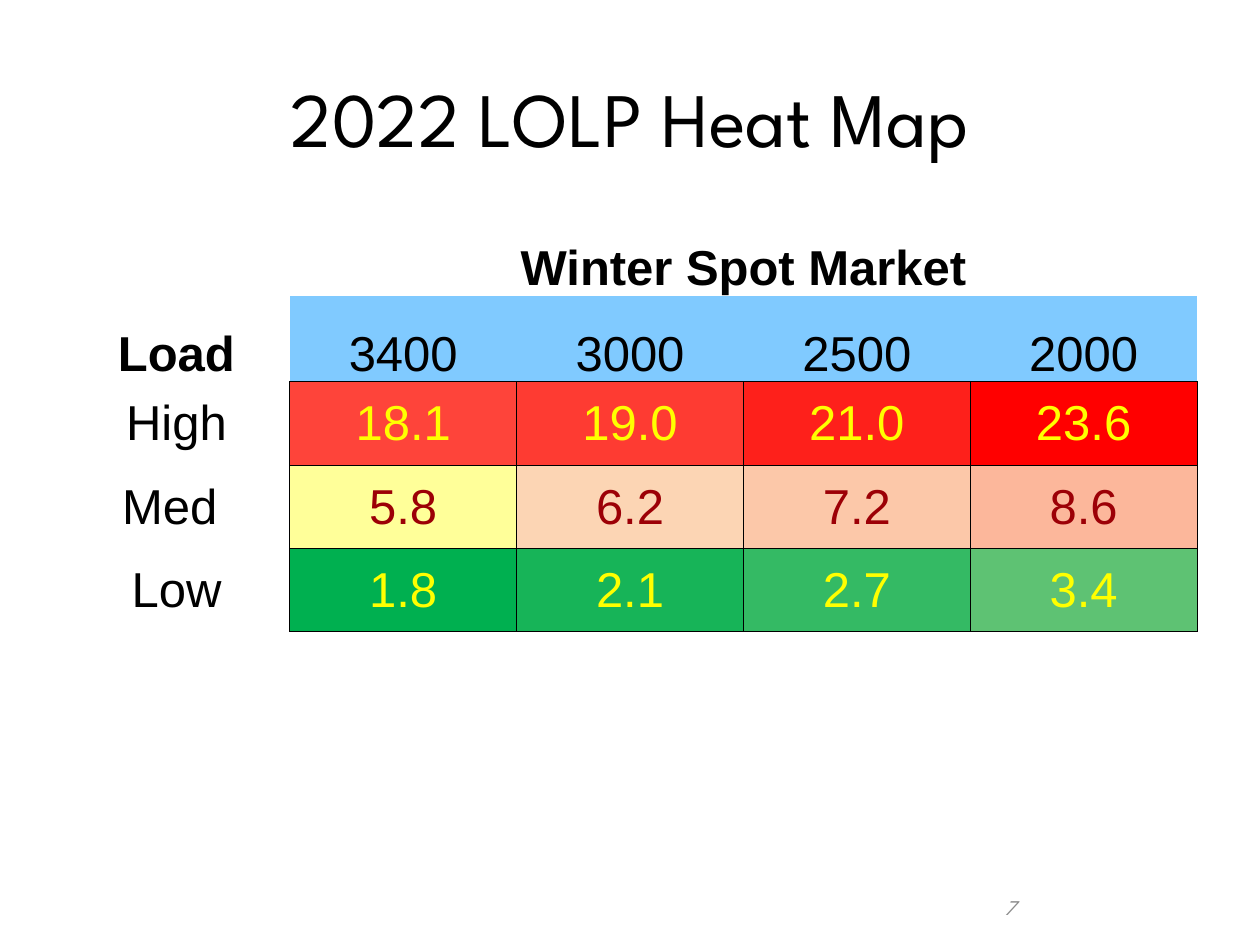
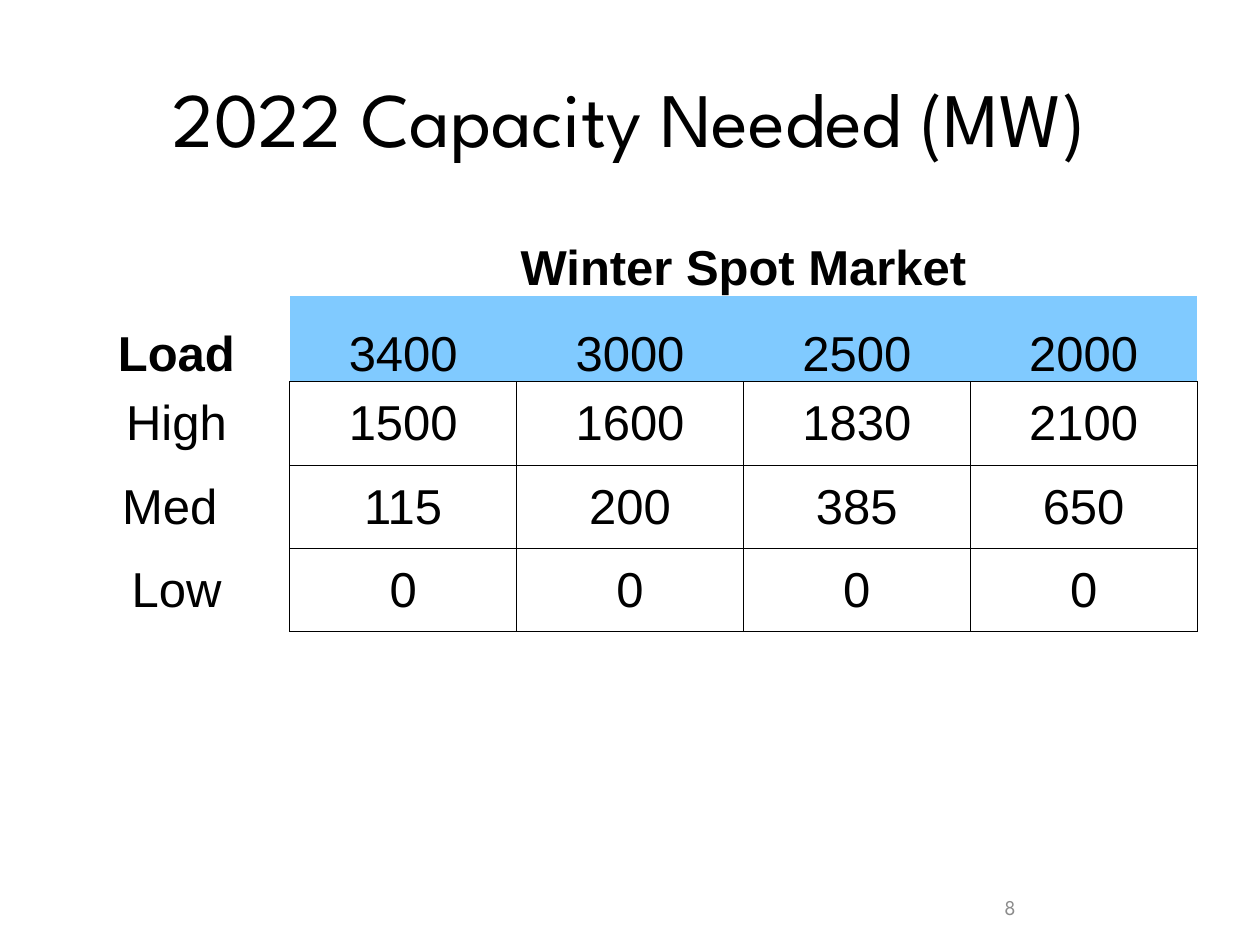
from lxml import etree
from pptx import Presentation
from pptx.dml.color import RGBColor
from pptx.enum.text import MSO_ANCHOR, PP_ALIGN
from pptx.oxml.ns import qn
from pptx.util import Inches, Pt

CENTER, RIGHT = PP_ALIGN.CENTER, PP_ALIGN.RIGHT
MIDDLE, BOTTOM = MSO_ANCHOR.MIDDLE, MSO_ANCHOR.BOTTOM

BLACK = RGBColor(0x00, 0x00, 0x00)
WHITE = RGBColor(0xFF, 0xFF, 0xFF)
GREY = RGBColor(0x8C, 0x8C, 0x8C)
SKY = RGBColor(0x80, 0xCA, 0xFF)
YELLOW = RGBColor(0xFF, 0xFF, 0x00)
DARK_RED = RGBColor(0x9C, 0x00, 0x06)

HEAT_FILLS = [
    [RGBColor(0xFE, 0x44, 0x3A), RGBColor(0xFE, 0x3B, 0x32),
     RGBColor(0xFE, 0x20, 0x1B), RGBColor(0xFF, 0x00, 0x00)],
    [RGBColor(0xFF, 0xFF, 0x99), RGBColor(0xFC, 0xD5, 0xB4),
     RGBColor(0xFC, 0xC8, 0xA9), RGBColor(0xFC, 0xB7, 0x9B)],
    [RGBColor(0x00, 0xB0, 0x50), RGBColor(0x17, 0xB4, 0x58),
     RGBColor(0x34, 0xBA, 0x64), RGBColor(0x5E, 0xC2, 0x73)],
]
HEAT_INKS = [YELLOW, DARK_RED, YELLOW]
PLAIN_FILLS = [[WHITE] * 4] * 3
PLAIN_INKS = [BLACK] * 3

TITLE_FONT, TABLE_FONT = "League Spartan", "Arial"
SLIDE_W, SLIDE_H = Inches(10), Inches(7.5)
MARGIN = Inches(0.5)
TABLE_TOP = Inches(1.67)
COL_W = (SLIDE_W - 2 * MARGIN) // 5
ROW_HEIGHTS = [Inches(h) for h in (0.68, 0.68, 0.66, 0.66, 0.66)]

SPOT_MARKET = ["3400", "3000", "2500", "2000"]
LOADS = ["High", "Med ", "Low"]
LOLP = [["18.1", "19.0", "21.0", "23.6"],
        ["5.8", "6.2", "7.2", "8.6"],
        ["1.8", "2.1", "2.7", "3.4"]]
CAPACITY = [["1500", "1600", "1830", "2100"],
            ["115", "200", "385", "650"],
            ["0", "0", "0", "0"]]


def write(tf, text, font, size, color, align=CENTER, bold=False, italic=False):
    p = tf.paragraphs[0]
    p.text = text
    p.alignment = align
    p.font.name, p.font.size = font, Pt(size)
    p.font.bold, p.font.italic = bold, italic
    p.font.color.rgb = color


def add_text(s, left, top, width, height, text, size, color, **style):
    tf = s.shapes.add_textbox(left, top, width, height).text_frame
    tf.word_wrap = True
    tf.vertical_anchor = MIDDLE
    write(tf, text, TITLE_FONT, size, color, **style)


def set_borders(cell, sides):
    """Rule the sides named by letters of "LRTB" and clear the others."""
    tc_pr = cell._tc.get_or_add_tcPr()
    for side in "LRTB":
        ln = etree.SubElement(tc_pr, qn("a:ln" + side), w=str(Pt(0.5)))
        if side in sides:
            fill = etree.SubElement(ln, qn("a:solidFill"))
            etree.SubElement(fill, qn("a:srgbClr"), val=str(BLACK))
        else:
            etree.SubElement(ln, qn("a:noFill"))


def style_cell(cell, text="", sides="", fill=None, ink=BLACK, bold=False,
               anchor=MIDDLE):
    set_borders(cell, sides)
    if fill is None:
        cell.fill.background()
    else:
        cell.fill.solid()
        cell.fill.fore_color.rgb = fill
    cell.margin_left = cell.margin_right = cell.margin_top = Inches(0.01)
    cell.margin_bottom = 0
    cell.vertical_anchor = anchor
    write(cell.text_frame, text, TABLE_FONT, 28, ink, bold=bold)


def add_load_table(s, values, fills, inks):
    table = s.shapes.add_table(5, 5, MARGIN, TABLE_TOP, 5 * COL_W,
                               sum(ROW_HEIGHTS)).table
    table.first_row = table.horz_banding = False
    for col in table.columns:
        col.width = COL_W
    for row, height in zip(table.rows, ROW_HEIGHTS):
        row.height = height

    for c in (0, 2, 3, 4):
        style_cell(table.cell(0, c))
    table.cell(0, 1).merge(table.cell(0, 4))
    style_cell(table.cell(0, 1), "Winter Spot Market", bold=True, anchor=BOTTOM)
    style_cell(table.cell(1, 0), "Load", bold=True, anchor=BOTTOM)
    for c, market in enumerate(SPOT_MARKET, 1):
        style_cell(table.cell(1, c), market, "B", SKY, anchor=BOTTOM)
    for r, load in enumerate(LOADS):
        style_cell(table.cell(r + 2, 0), load, "R")
        for c, value in enumerate(values[r]):
            style_cell(table.cell(r + 2, c + 1), value, "LRTB",
                       fills[r][c], inks[r])


def add_load_slide(prs, title, number, values, fills, inks,
                   italic_number=False):
    s = prs.slides.add_slide(prs.slide_layouts[6])
    add_text(s, MARGIN, Inches(0.3), SLIDE_W - 2 * MARGIN, Inches(1.25),
             title, 44, BLACK)
    add_load_table(s, values, fills, inks)
    add_text(s, Inches(5.83), Inches(7), Inches(2.33), Inches(0.4),
             number, 12, GREY, align=RIGHT, italic=italic_number)


def main():
    prs = Presentation()
    prs.slide_width, prs.slide_height = SLIDE_W, SLIDE_H
    add_load_slide(prs, "2022 LOLP Heat Map", "7", LOLP, HEAT_FILLS, HEAT_INKS,
                   italic_number=True)
    add_load_slide(prs, "2022 Capacity Needed (MW)", "8", CAPACITY,
                   PLAIN_FILLS, PLAIN_INKS)
    prs.save("out.pptx")


if __name__ == "__main__":
    main()
